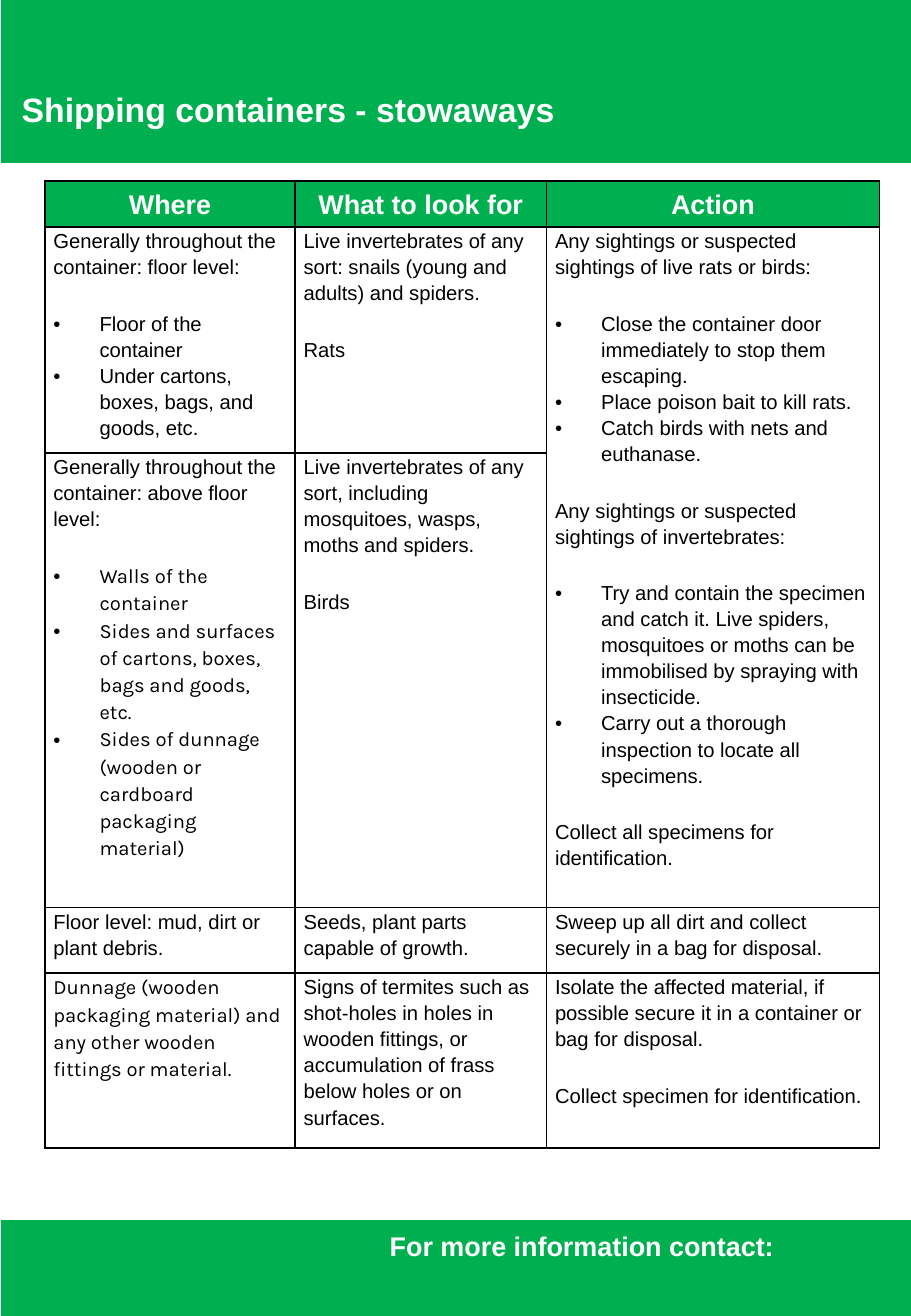
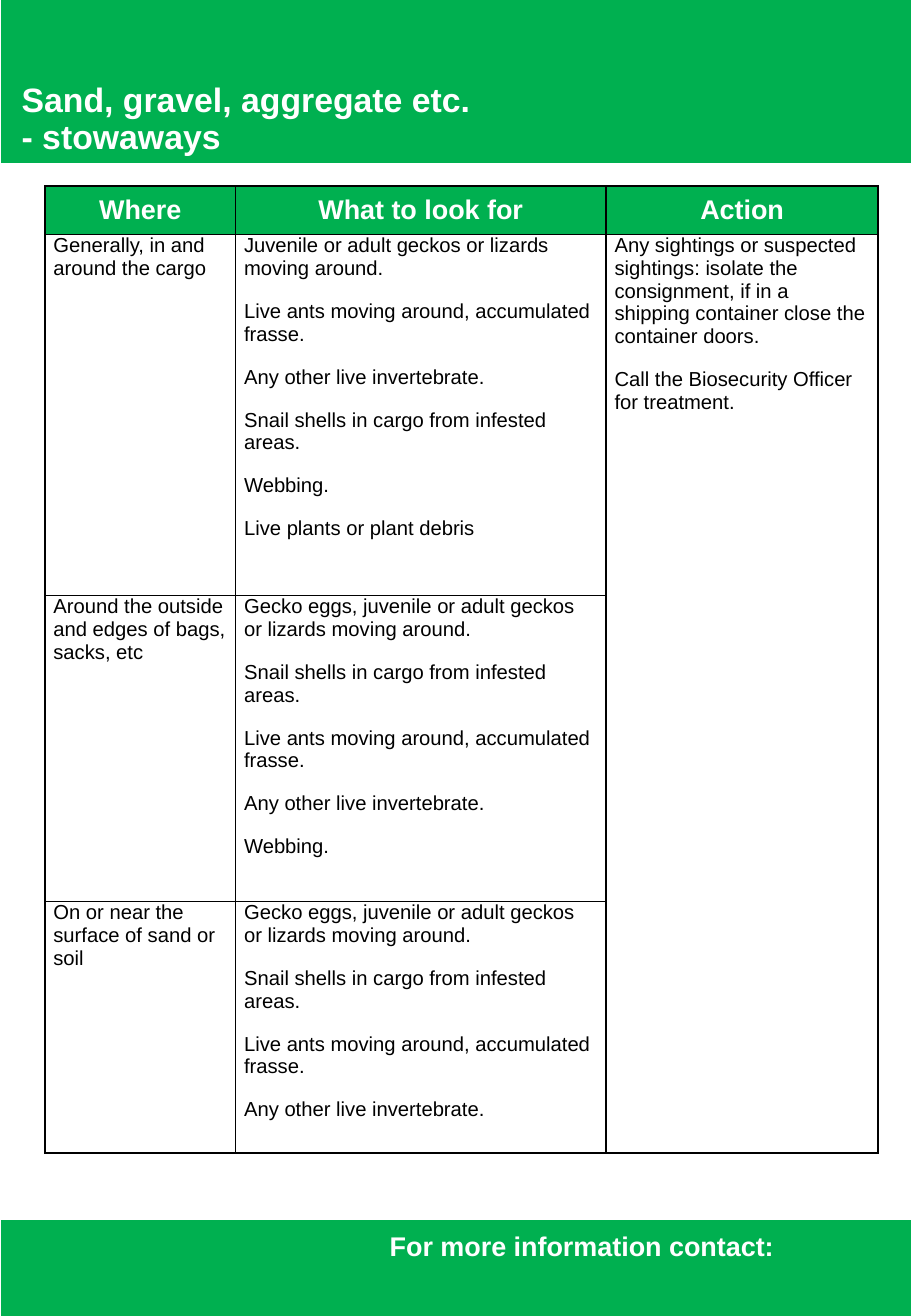
from dataclasses import dataclass
from typing import Any

from lxml.etree import SubElement
from pptx import Presentation
from pptx.dml.color import RGBColor
from pptx.enum.shapes import MSO_SHAPE as Shape
from pptx.enum.text import MSO_ANCHOR as Anchor, PP_ALIGN as Align
from pptx.oxml.ns import qn
from pptx.util import Emu, Pt

PX = 9144  # 100 px to the inch
COLORS = {"green": "00B050", "white": "FFFFFF", "black": "000000"}
TITLE_FONT = {"name": "Arial", "size": Pt(20), "bold": True}
HEADING_FONT = {"name": "Arial", "size": Pt(16), "bold": True}
BODY_FONT = {"name": "Arial", "size": Pt(12), "bold": False}
HEADING_MARGINS = dict.fromkeys(("margin_left", "margin_right", "margin_top", "margin_bottom"), Emu(3 * PX))
BODY_MARGINS = {"margin_left": Emu(7 * PX), "margin_right": Emu(7 * PX), "margin_top": 0, "margin_bottom": 0}
HEADINGS = ("Where", "What to look for", "Action")
BULLET_INDENT = 38
BORDER_SIDES = ("a:lnL", "a:lnR", "a:lnT", "a:lnB")


@dataclass(frozen=True)
class Para:
    text: str
    bullet: bool = False
    font: str = "Arial"


@dataclass(frozen=True)
class Guide:
    """One page: its title and the table of places, signs and actions."""
    title: str
    title_box: tuple[int, int, int, int]
    table_top: int
    columns: tuple[int, ...]
    heights: tuple[int, ...]
    rows: tuple[tuple[tuple[Para, ...], ...], ...]
    action_span: int
    gap_before: int
    line_spacing: float


def plain(*texts: str, font: str = "Arial") -> tuple[Para, ...]:
    return tuple(Para(text, font=font) for text in texts)


def bullets(*texts: str, font: str = "Arial") -> tuple[Para, ...]:
    return tuple(Para(text, True, font) for text in texts)


GECKOS = "Gecko eggs, juvenile or adult geckos or lizards moving around."
ANTS = "Live ants moving around, accumulated frasse."
INVERTEBRATES = "Any other live invertebrate."
SNAILS = "Snail shells in cargo from infested areas."
WEBBING = "Webbing."

GUIDES = (
    Guide(
        title="Shipping containers - stowaways",
        title_box=(8, 72, 560, 44),
        table_top=149,
        columns=(206, 207, 274),
        heights=(35, 185, 359, 54, 144),
        action_span=2,
        gap_before=12,
        line_spacing=1.15,
        rows=(
            (
                plain("Generally throughout the container: floor level:")
                + bullets("Floor of the container", "Under cartons, boxes, bags, and goods, etc."),
                plain("Live invertebrates of any sort: snails (young and adults) and spiders.", "Rats"),
                plain("Any sightings or suspected sightings of live rats or birds:")
                + bullets(
                    "Close the container door immediately to stop them escaping.",
                    "Place poison bait to kill rats.",
                    "Catch birds with nets and euthanase.",
                )
                + plain("Any sightings or suspected sightings of invertebrates:")
                + bullets(
                    "Try and contain the specimen and catch it. Live spiders, mosquitoes or moths "
                    "can be immobilised by spraying with insecticide.",
                    "Carry out a thorough inspection to locate all specimens.",
                )
                + plain("Collect all specimens for identification."),
            ),
            (
                plain("Generally throughout the container: above floor level:")
                + bullets(
                    "Walls of the container",
                    "Sides and surfaces of cartons, boxes, bags and goods, etc.",
                    "Sides of dunnage (wooden or cardboard packaging material)",
                    font="Karla",
                ),
                plain("Live invertebrates of any sort, including mosquitoes, wasps, moths and spiders.", "Birds"),
            ),
            (
                plain("Floor level: mud, dirt or plant debris."),
                plain("Seeds, plant parts capable of growth."),
                plain("Sweep up all dirt and collect securely in a bag for disposal."),
            ),
            (
                plain("Dunnage (wooden packaging material) and any other wooden fittings or material.", font="Karla"),
                plain("Signs of termites such as shot-holes in holes in wooden fittings, or "
                      "accumulation of frass below holes or on surfaces."),
                plain("Isolate the affected material, if possible secure it in a container or bag for disposal.",
                      "Collect specimen for identification."),
            ),
        ),
    ),
    Guide(
        title="Sand, gravel, aggregate etc. - stowaways",
        title_box=(8, 64, 400, 44),
        table_top=153,
        columns=(157, 305, 224),
        heights=(40, 297, 252, 207),
        action_span=3,
        gap_before=6,
        line_spacing=1.0,
        rows=(
            (
                plain("Generally, in and around the cargo"),
                plain("Juvenile or adult geckos or lizards moving around.", ANTS, INVERTEBRATES, SNAILS,
                      WEBBING, "Live plants or plant debris"),
                plain("Any sightings or suspected sightings: isolate the consignment, if in a shipping "
                      "container close the container doors.",
                      "Call the Biosecurity Officer for treatment."),
            ),
            (
                plain("Around the outside and edges of bags, sacks, etc"),
                plain(GECKOS, SNAILS, ANTS, INVERTEBRATES, WEBBING),
            ),
            (
                plain("On or near the surface of sand or soil"),
                plain(GECKOS, SNAILS, ANTS, INVERTEBRATES),
            ),
        ),
    ),
)


def rgb(color: str) -> RGBColor:
    return RGBColor.from_string(COLORS[color])


def px(*lengths: int) -> list[Emu]:
    return [Emu(length * PX) for length in lengths]


def set_values(target: Any, values: dict[str, Any]) -> None:
    for name, value in values.items():
        setattr(target, name, value)


def write(paragraph: Any, text: str, font: dict[str, Any], color: str, **layout: Any) -> None:
    set_values(paragraph, layout)
    run = paragraph.add_run()
    run.text = text
    set_values(run.font, font)
    run.font.color.rgb = rgb(color)


def add_band(slide: Any, top: int, height: int) -> None:
    band = slide.shapes.add_shape(Shape.RECTANGLE, *px(1, top, 749, height))
    band.shadow.inherit = False
    band.fill.solid()
    band.fill.fore_color.rgb = rgb("green")
    band.line.fill.background()


def add_label(slide: Any, box: tuple[int, int, int, int], text: str, font: dict[str, Any], **layout: Any) -> None:
    frame = slide.shapes.add_textbox(*px(*box)).text_frame
    frame.word_wrap = True
    write(frame.paragraphs[0], text, font, "white", **layout)


def add_bullet(paragraph: Any) -> None:
    properties = paragraph._p.get_or_add_pPr()
    indent = BULLET_INDENT * PX
    properties.set("marL", str(indent))
    properties.set("indent", str(-indent))
    SubElement(properties, qn("a:buFont"), typeface="Arial")
    SubElement(properties, qn("a:buChar"), char="•")


def add_borders(cell: Any) -> None:
    properties = cell._tc.get_or_add_tcPr()
    for position, side in enumerate(BORDER_SIDES):
        line = properties.makeelement(qn(side), {"w": str(Pt(1))})
        fill = SubElement(line, qn("a:solidFill"))
        SubElement(fill, qn("a:srgbClr"), val=COLORS["black"])
        properties.insert(position, line)


def fill_heading(cell: Any, heading: str) -> None:
    set_values(cell, HEADING_MARGINS)
    cell.fill.solid()
    cell.fill.fore_color.rgb = rgb("green")
    write(cell.text_frame.paragraphs[0], heading, HEADING_FONT, "white",
          alignment=Align.CENTER, line_spacing=1.19)


def fill_body(cell: Any, paras: tuple[Para, ...], guide: Guide) -> None:
    """Write paragraphs, keeping neighbouring bullets tight together."""
    frame = cell.text_frame
    for index, para in enumerate(paras):
        paragraph = frame.add_paragraph() if index else frame.paragraphs[0]
        follows_bullet = para.bullet and index > 0 and paras[index - 1].bullet
        leads_bullet = para.bullet and index + 1 < len(paras) and paras[index + 1].bullet
        if para.bullet:
            add_bullet(paragraph)
        write(paragraph, para.text, BODY_FONT | {"name": para.font}, "black",
              line_spacing=guide.line_spacing,
              space_before=Pt(0 if index == 0 or follows_bullet else guide.gap_before),
              space_after=Pt(0 if leads_bullet else 6))


def add_guide_table(slide: Any, guide: Guide) -> None:
    frame = slide.shapes.add_table(
        len(guide.heights), len(guide.columns),
        *px(37, guide.table_top, sum(guide.columns), sum(guide.heights)))
    table = frame.table
    set_values(table, {"first_row": False, "horz_banding": False})
    for column, width in zip(table.columns, px(*guide.columns)):
        column.width = width
    for row, height in zip(table.rows, px(*guide.heights)):
        row.height = height
    for cell in table.iter_cells():
        set_values(cell, BODY_MARGINS | {"vertical_anchor": Anchor.TOP})
        cell.fill.background()
        add_borders(cell)
    table.cell(1, 2).merge(table.cell(guide.action_span, 2))
    for column, heading in enumerate(HEADINGS):
        fill_heading(table.cell(0, column), heading)
    for row, contents in enumerate(guide.rows, start=1):
        for column, paras in enumerate(contents):
            fill_body(table.cell(row, column), paras, guide)


def add_guide(deck: Any, guide: Guide) -> None:
    slide = deck.slides.add_slide(deck.slide_layouts[6])
    add_band(slide, -1, 135)
    add_band(slide, 1004, 79)
    add_label(slide, (311, 1007, 371, 37), "For more information contact:", HEADING_FONT)
    add_label(slide, guide.title_box, guide.title, TITLE_FONT, line_spacing=0.9)
    add_guide_table(slide, guide)


def main() -> None:
    deck = Presentation()
    deck.slide_width, deck.slide_height = px(750, 1083)
    for guide in GUIDES:
        add_guide(deck, guide)
    deck.save("out.pptx")


if __name__ == "__main__":
    main()
